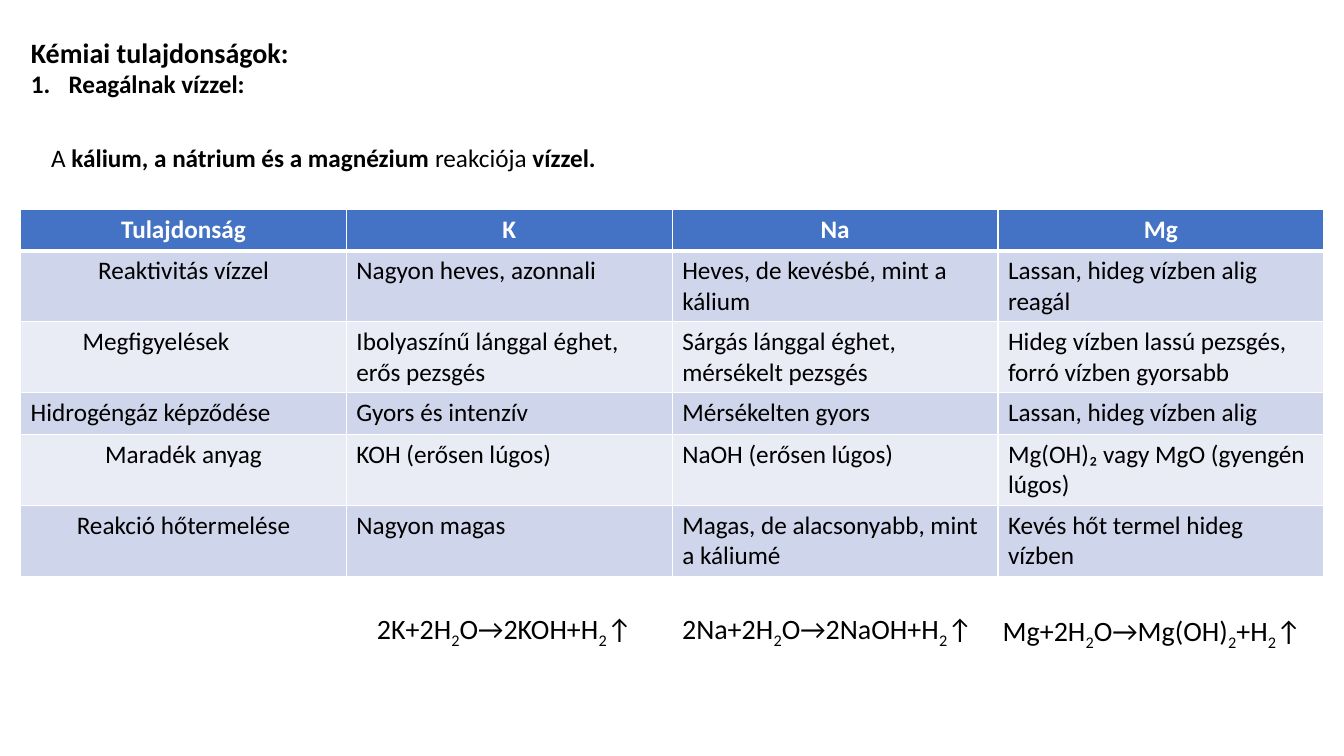
from lxml.etree import SubElement
from pptx import Presentation
from pptx.dml.color import RGBColor
from pptx.enum.text import MSO_AUTO_SIZE, PP_ALIGN
from pptx.oxml.ns import qn
from pptx.util import Cm, Pt

COLORS = {
    "text": "000000",
    "header_text": "FFFFFF",
    "header": "4472C4",
    "odd_band": "CFD5EA",
    "even_band": "E9EBF5",
    "border": "FFFFFF",
}
BODY = {"name": "Calibri", "size": Pt(18), "bold": False}
STRONG = {**BODY, "bold": True}
TITLE = {**STRONG, "size": Pt(20)}
FORMULA = {**BODY, "size": Pt(20)}

HEADER = ["Tulajdonság", "K", "Na", "Mg"]
PROPERTIES = [
    ["Reaktivitás vízzel", "Nagyon heves, azonnali",
     "Heves, de kevésbé, mint a kálium", "Lassan, hideg vízben alig reagál"],
    ["Megfigyelések", "Ibolyaszínű lánggal éghet, erős pezsgés",
     "Sárgás lánggal éghet, mérsékelt pezsgés",
     "Hideg vízben lassú pezsgés, forró vízben gyorsabb"],
    ["Hidrogéngáz képződése", "Gyors és intenzív",
     "Mérsékelten gyors", "Lassan, hideg vízben alig"],
    ["Maradék anyag", "KOH (erősen lúgos)",
     "NaOH (erősen lúgos)", "Mg(OH)₂ vagy MgO (gyengén lúgos)"],
    ["Reakció hőtermelése", "Nagyon magas",
     "Magas, de alacsonyabb, mint a káliumé", "Kevés hőt termel hideg vízben"],
]
ONE_LINE, TWO_LINES = Cm(1.04), Cm(1.79)
ROW_HEIGHTS = [ONE_LINE, TWO_LINES, TWO_LINES, ONE_LINE, TWO_LINES, TWO_LINES]
COLUMN_WIDTH = Cm(8.21)

# An underscore marks the next character as a subscript.
EQUATIONS = [
    ("2K+2H_2O→2KOH+H_2↑", (9.25, 15.29, 7.42, 1.12)),
    ("2Na+2H_2O→2NaOH+H_2↑", (16.94, 15.29, 8, 1.12)),
    ("Mg+2H_2O→Mg(OH)_2+H_2↑", (25.02, 15.27, 8.36, 1.14)),
]


def add_run(paragraph, text, format_values, color="text"):
    run = paragraph.add_run()
    run.text = text
    for attribute, value in format_values.items():
        setattr(run.font, attribute, value)
    run.font.color.rgb = RGBColor.from_string(COLORS[color])
    return run


def add_text_frame(slide, box):
    """Add a wrapping text box, placed in centimetres, and return its frame."""
    frame = slide.shapes.add_textbox(*map(Cm, box)).text_frame
    frame.word_wrap = True
    frame.auto_size = MSO_AUTO_SIZE.SHAPE_TO_FIT_TEXT
    return frame


def number_paragraph(paragraph):
    properties = paragraph._p.get_or_add_pPr()
    properties.set("marL", str(Cm(0.95)))
    properties.set("indent", str(-Cm(0.95)))
    SubElement(properties, qn("a:buFont"), typeface="+mj-lt")
    SubElement(properties, qn("a:buAutoNum"), type="arabicPeriod")


def add_heading(slide):
    frame = add_text_frame(slide, (0.53, 0.76, 30.63, 1.88))
    add_run(frame.paragraphs[0], "Kémiai tulajdonságok:", TITLE)
    reaction = frame.add_paragraph()
    number_paragraph(reaction)
    add_run(reaction, "Reagálnak vízzel:", STRONG)


def add_introduction(slide):
    sentence = add_text_frame(slide, (1.04, 3.45, 31.85, 1.02)).paragraphs[0]
    add_run(sentence, "A ", BODY)
    add_run(sentence, "kálium, a nátrium és a magnézium ", STRONG)
    add_run(sentence, "reakciója ", BODY)
    add_run(sentence, "vízzel.", STRONG)


def add_equation(slide, equation, box):
    paragraph = add_text_frame(slide, box).paragraphs[0]
    start, *rest = equation.split("_")
    add_run(paragraph, start, FORMULA)
    for part in rest:
        subscript = add_run(paragraph, part[0], FORMULA)
        subscript._r.get_or_add_rPr().set("baseline", "-25000")
        add_run(paragraph, part[1:], FORMULA)
    return paragraph


def set_borders(cell, widths):
    properties = cell._tc.get_or_add_tcPr()
    for side, width in zip("LRTB", widths):
        line = SubElement(properties, qn(f"a:ln{side}"), w=str(Pt(width)))
        fill = SubElement(line, qn("a:solidFill"))
        SubElement(fill, qn("a:srgbClr"), val=COLORS["border"])


def fill_cell(cell, text, row, column):
    if row == 0:
        band, color, font, widths = "header", "header_text", STRONG, (1, 1, 1, 3)
    else:
        band = "odd_band" if row % 2 else "even_band"
        color, font = "text", BODY
        widths = (1, 1, 3 if row == 1 else 1, 1)
    set_borders(cell, widths)
    cell.fill.solid()
    cell.fill.fore_color.rgb = RGBColor.from_string(COLORS[band])
    paragraph = cell.text_frame.paragraphs[0]
    centred = row == 0 or column == 0
    paragraph.alignment = PP_ALIGN.CENTER if centred else PP_ALIGN.LEFT
    add_run(paragraph, text, font, color)


def add_property_table(slide):
    rows = [HEADER, *PROPERTIES]
    table = slide.shapes.add_table(
        len(rows), len(HEADER), Cm(0.52), Cm(5.28),
        COLUMN_WIDTH * len(HEADER), sum(ROW_HEIGHTS)).table
    for column in table.columns:
        column.width = COLUMN_WIDTH
    for row, (texts, height) in enumerate(zip(rows, ROW_HEIGHTS)):
        table.rows[row].height = height
        for column, text in enumerate(texts):
            fill_cell(table.cell(row, column), text, row, column)
    observations, hydrogen = table.cell(2, 0), table.cell(3, 0)
    observations.margin_right = Cm(1.64)
    hydrogen.text_frame.paragraphs[0].alignment = PP_ALIGN.LEFT


def main():
    presentation = Presentation()
    presentation.slide_width = Cm(33.87)
    presentation.slide_height = Cm(19.05)
    slide = presentation.slides.add_slide(presentation.slide_layouts[6])
    add_introduction(slide)
    add_property_table(slide)
    for equation, box in EQUATIONS:
        paragraph = add_equation(slide, equation, box)
    paragraph.line_spacing = 1.07
    paragraph.space_after = Pt(8)
    add_heading(slide)
    presentation.save("out.pptx")


if __name__ == "__main__":
    main()
